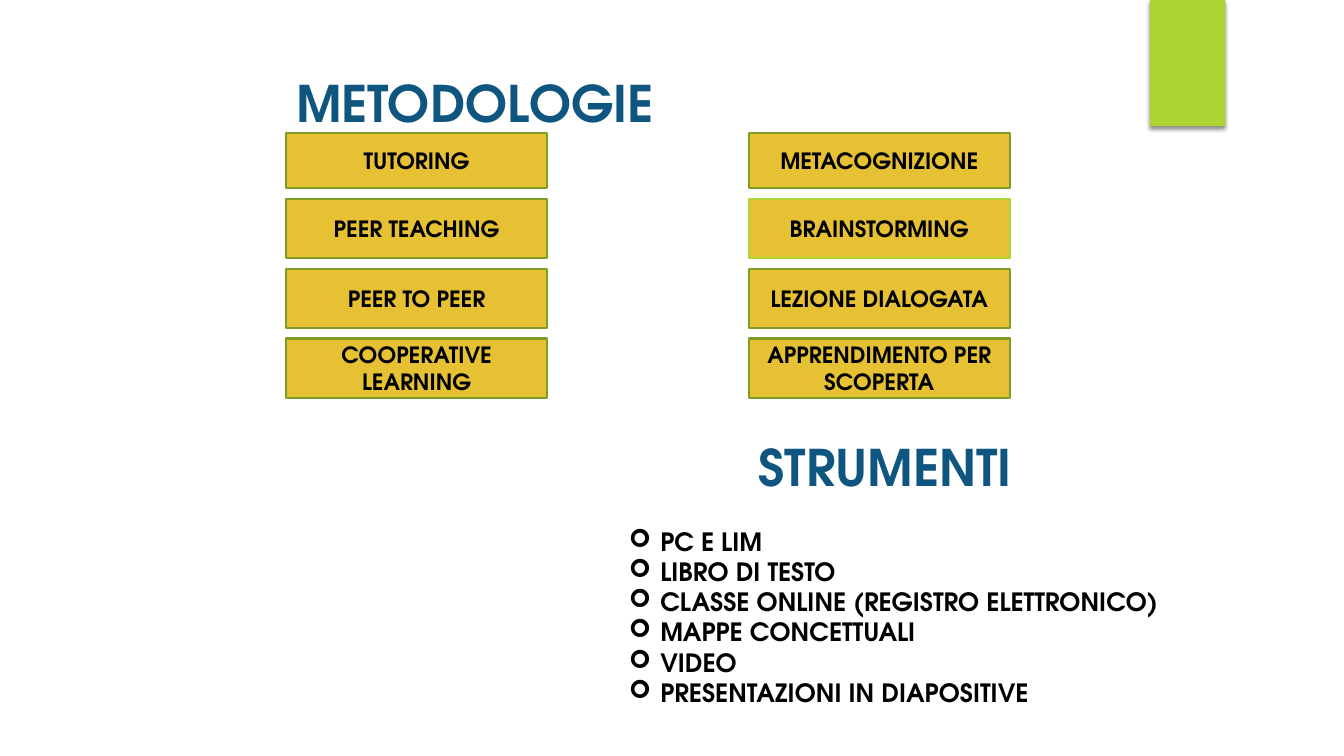
import pptx
import pptx.dml.color
import pptx.enum.shapes
import pptx.enum.text
import pptx.oxml
import pptx.oxml.ns
import pptx.util
from pptx.util import Cm

FONT = "TeX Gyre Adventor"
COLORS = {
    "background": "FFFFFF",
    "heading": "0E5580",
    "text": "000000",
    "box": "E6C133",
    "border": "7F9D26",
    "accent": "ACD433",
}
METHODS = [
    (Cm(7.21), ["TUTORING", "PEER TEACHING", "PEER TO PEER", "COOPERATIVE LEARNING"]),
    (Cm(18.87), ["METACOGNIZIONE", "BRAINSTORMING", "LEZIONE DIALOGATA",
                 "APPRENDIMENTO PER SCOPERTA"]),
]
HIGHLIGHTED = "BRAINSTORMING"
ROW_HEIGHTS = [Cm(1.4), Cm(1.5), Cm(1.5), Cm(1.5)]
ROW_GAP = Cm(0.26)
TOOLS = [
    "PC E LIM",
    "LIBRO DI TESTO",
    "CLASSE ONLINE (REGISTRO ELETTRONICO)",
    "MAPPE CONCETTUALI",
    "VIDEO",
    "PRESENTAZIONI IN DIAPOSITIVE",
]


def color(name):
    return pptx.dml.color.RGBColor.from_string(COLORS[name])


def format_text(paragraph, size, color_name, alignment):
    paragraph.alignment = alignment
    for run in paragraph.runs:
        run.font.name = FONT
        run.font.size = pptx.util.Pt(size)
        run.font.bold = True
        run.font.color.rgb = color(color_name)


def format_heading(text_frame, text):
    text_frame.text = text
    text_frame.word_wrap = True
    text_frame.auto_size = pptx.enum.text.MSO_AUTO_SIZE.NONE
    format_text(text_frame.paragraphs[0], 36, "heading", pptx.enum.text.PP_ALIGN.LEFT)


def add_rectangle(slide, left, top, width, height, fill_name):
    shape = slide.shapes.add_shape(
        pptx.enum.shapes.MSO_SHAPE.RECTANGLE, left, top, width, height)
    shape.shadow.inherit = False
    shape.fill.solid()
    shape.fill.fore_color.rgb = color(fill_name)
    return shape


def add_ribbon(slide):
    shape = add_rectangle(slide, Cm(28.98), Cm(0), Cm(1.9), Cm(3.18), "accent")
    shape.line.fill.background()
    effects = shape._element.spPr.find(pptx.oxml.ns.qn("a:effectLst"))
    effects.append(pptx.oxml.parse_xml(
        f'<a:outerShdw {pptx.oxml.ns.nsdecls("a")} blurRad="38100" dist="25400" '
        'dir="5400000" rotWithShape="0"><a:srgbClr val="000000">'
        '<a:alpha val="45000"/></a:srgbClr></a:outerShdw>'))


def add_title(slide):
    title = slide.shapes.title
    title.left, title.top = Cm(7.21), Cm(0.79)
    title.width, title.height = Cm(24.77), Cm(3.56)
    title.text_frame.vertical_anchor = pptx.enum.text.MSO_ANCHOR.MIDDLE
    format_heading(title.text_frame, "METODOLOGIE")


def add_method_box(slide, left, top, height, text):
    shape = add_rectangle(slide, left, top, Cm(6.58), height, "box")
    shape.line.color.rgb = color("accent" if text == HIGHLIGHTED else "border")
    shape.line.width = pptx.util.Pt(1.5)
    text_frame = shape.text_frame
    text_frame.text = text
    text_frame.word_wrap = True
    text_frame.vertical_anchor = pptx.enum.text.MSO_ANCHOR.MIDDLE
    format_text(text_frame.paragraphs[0], 16, "text", pptx.enum.text.PP_ALIGN.CENTER)


def add_method_column(slide, left, labels):
    top = Cm(3.35)
    for label, height in zip(labels, ROW_HEIGHTS):
        add_method_box(slide, left, top, height, label)
        top += height + ROW_GAP


def add_bullet(paragraph):
    properties = paragraph._p.get_or_add_pPr()
    properties.set("marL", str(Cm(0.79)))
    properties.set("indent", str(-Cm(0.79)))
    namespace = pptx.oxml.ns.nsdecls("a")
    properties.append(pptx.oxml.parse_xml(f'<a:buFont {namespace} typeface="Wingdings"/>'))
    properties.append(pptx.oxml.parse_xml(f'<a:buChar {namespace} char="➢"/>'))


def add_tools_list(slide):
    text_box = slide.shapes.add_textbox(Cm(15.6), Cm(13.13), Cm(17.5), Cm(5.64))
    text_frame = text_box.text_frame
    text_frame.word_wrap = True
    text_frame.text = "\n".join(TOOLS)
    for paragraph in text_frame.paragraphs:
        add_bullet(paragraph)
        format_text(paragraph, 18, "text", pptx.enum.text.PP_ALIGN.LEFT)


def main():
    presentation = pptx.Presentation()
    presentation.slide_width = Cm(33.87)
    presentation.slide_height = Cm(19.05)
    slide = presentation.slides.add_slide(presentation.slide_layouts[5])
    slide.background.fill.solid()
    slide.background.fill.fore_color.rgb = color("background")
    add_ribbon(slide)
    add_title(slide)
    heading_box = slide.shapes.add_textbox(Cm(18.87), Cm(10.87), Cm(14), Cm(1.8))
    format_heading(heading_box.text_frame, "STRUMENTI")
    add_tools_list(slide)
    for left, labels in METHODS:
        add_method_column(slide, left, labels)
    presentation.save("out.pptx")


if __name__ == "__main__":
    main()
